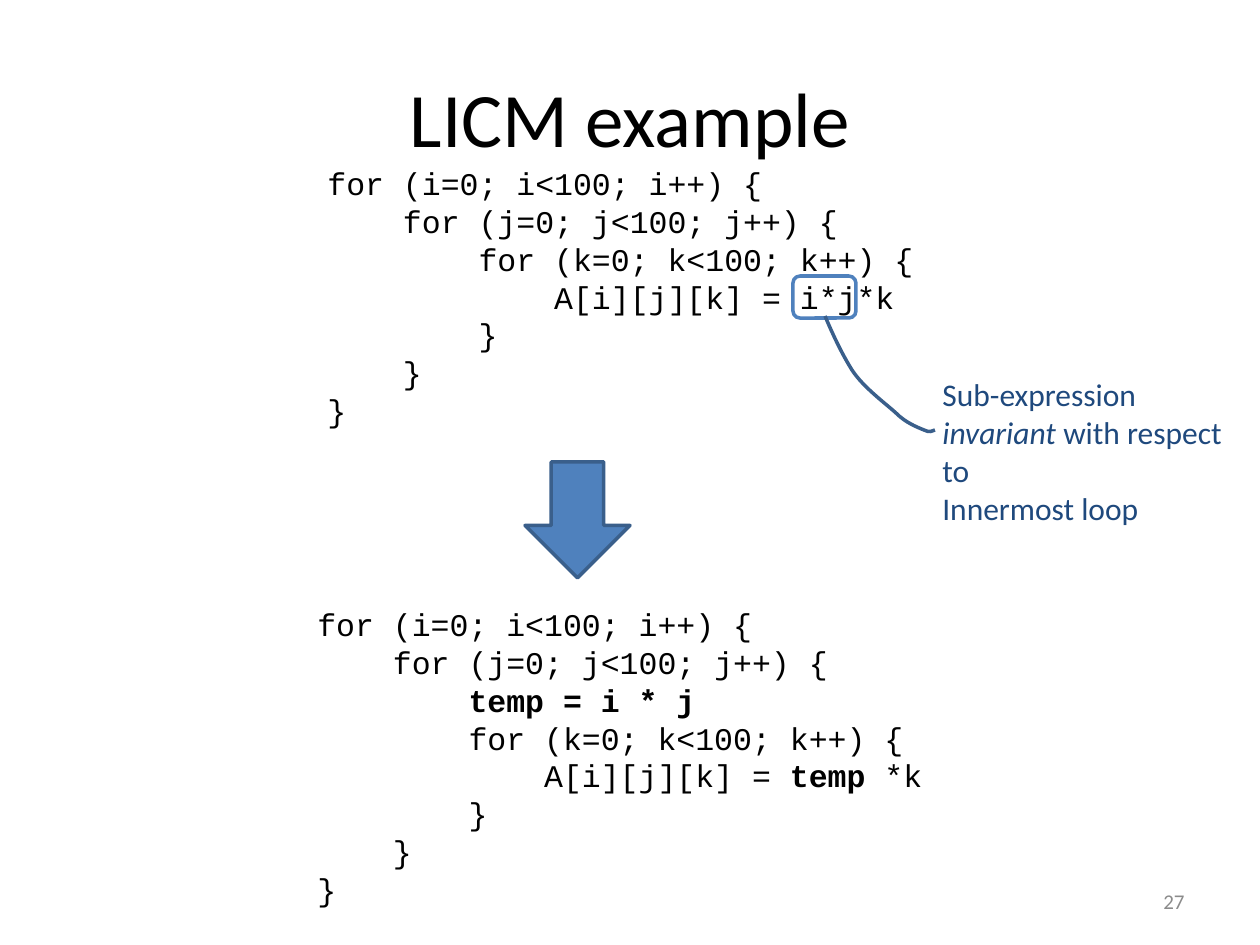
from lxml import etree
from pptx import Presentation
from pptx import util as u
from pptx.dml.color import RGBColor
from pptx.enum import shapes, text
from pptx.oxml.ns import qn

EMU_PER_PX = 914400 / 126
THEME = {
    "black": "000000", "navy": "1F497D", "grey": "8B8B8B",
    "blue": "4F81BD", "edge": "3A5F8B",
    "body": "Calibri", "code": "Courier New",
    "title_pt": 44, "text_pt": 18, "number_pt": 12, "line_pt": 2,
}
INDENT_PT = 4 * 0.6 * THEME["text_pt"]  # four monospaced characters

# Each line is (indent level, runs); each run is (text, font changes).
BOLD, ITALIC = {"bold": True}, {"italic": True}
LOOP_I = (0, [("for (i=0; i<100; i++) {", {})])
LOOP_J = (1, [("for (j=0; j<100; j++) {", {})])
LOOP_K = (2, [("for (k=0; k<100; k++) {", {})])
CLOSING = [(level, [("}", {})]) for level in (2, 1, 0)]

TITLE = [(0, [("LICM example", {})])]
BEFORE = [LOOP_I, LOOP_J, LOOP_K, (3, [("A[i][j][k] = i*j*k", {})])] + CLOSING
AFTER = [
    LOOP_I, LOOP_J, (2, [("temp = i * j", BOLD)]), LOOP_K,
    (3, [("A[i][j][k] = ", {}), ("temp ", BOLD), ("*k", {})]),
] + CLOSING
REMARK = [
    (0, [("Sub-expression", {})]),
    (0, [("invariant ", ITALIC), ("with respect to", {})]),
    (0, [("Innermost loop", {})]),
]
PAGE_NUMBER = [(0, [("27", {})])]

TITLE_BOX = (63, 38, 1134, 158)
# Start point, then two control points and an end point for each curve.
REMARK_CURVE = [
    (935, 430),
    (932, 431), (930, 433), (924, 430),
    (917, 427), (906, 423), (896, 413),
    (885, 403), (863, 387), (852, 370),
    (842, 354), (833, 335), (825, 316),
]


def px(*lengths):
    return [u.Emu(round(n * EMU_PER_PX)) for n in lengths]


def write(frame, lines, font="body", size="text_pt", color="black",
          align=text.PP_ALIGN.LEFT, anchor=text.MSO_ANCHOR.TOP):
    frame.word_wrap = True
    frame.vertical_anchor = anchor
    for i, (level, runs) in enumerate(lines):
        paragraph = frame.paragraphs[0] if i == 0 else frame.add_paragraph()
        paragraph.alignment = align
        if level:
            margin = u.Pt(level * INDENT_PT)
            paragraph._p.get_or_add_pPr().set("marL", str(margin))
        for words, changes in runs:
            run = paragraph.add_run()
            run.text = words
            run.font.color.rgb = RGBColor.from_string(THEME[color])
            values = {"name": THEME[font], "size": u.Pt(THEME[size]), **changes}
            for key, value in values.items():
                setattr(run.font, key, value)


def add_text(slide, box, lines, **style):
    write(slide.shapes.add_textbox(*px(*box)).text_frame, lines, **style)


def paint(shape, line, fill=None):
    shape.shadow.inherit = False
    if fill:
        shape.fill.solid()
        shape.fill.fore_color.rgb = RGBColor.from_string(THEME[fill])
    else:
        shape.fill.background()
    shape.line.color.rgb = RGBColor.from_string(THEME[line])
    shape.line.width = u.Pt(THEME["line_pt"])


def add_curve(slide, points):
    """Draw the points as a chain of cubic Bezier curves."""
    builder = slide.shapes.build_freeform(*points[0], scale=EMU_PER_PX)
    builder.add_line_segments(points[1:], close=False)
    curve = builder.convert_to_shape()
    outline = next(curve._element.iter(qn("a:path")))
    segments = outline.findall(qn("a:lnTo"))
    for i in range(0, len(segments), 3):
        bezier = etree.SubElement(outline, qn("a:cubicBezTo"))
        for segment in segments[i:i + 3]:
            bezier.append(segment[0])
            outline.remove(segment)
    return curve


def main():
    deck = Presentation()
    deck.slide_width, deck.slide_height = px(1260, 945)
    slide = deck.slides.add_slide(deck.slide_layouts[5])

    title = slide.shapes.title
    title.left, title.top, title.width, title.height = px(*TITLE_BOX)
    write(title.text_frame, TITLE, size="title_pt",
          align=text.PP_ALIGN.CENTER, anchor=text.MSO_ANCHOR.MIDDLE)

    add_text(slide, (315, 158, 630, 277), BEFORE, font="code")
    highlight = slide.shapes.add_shape(
        shapes.MSO_SHAPE.ROUNDED_RECTANGLE, *px(793, 276, 63, 42))
    paint(highlight, "blue")
    paint(add_curve(slide, REMARK_CURVE), "edge")
    add_text(slide, (930, 369, 315, 165), REMARK, color="navy")

    arrow = slide.shapes.add_shape(
        shapes.MSO_SHAPE.DOWN_ARROW, *px(525, 462, 105, 116))
    paint(arrow, "edge", fill="blue")
    add_text(slide, (305, 599, 630, 315), AFTER, font="code")
    add_text(slide, (903, 876, 294, 50), PAGE_NUMBER, size="number_pt",
             color="grey", align=text.PP_ALIGN.RIGHT,
             anchor=text.MSO_ANCHOR.MIDDLE)
    deck.save("out.pptx")


if __name__ == "__main__":
    main()
